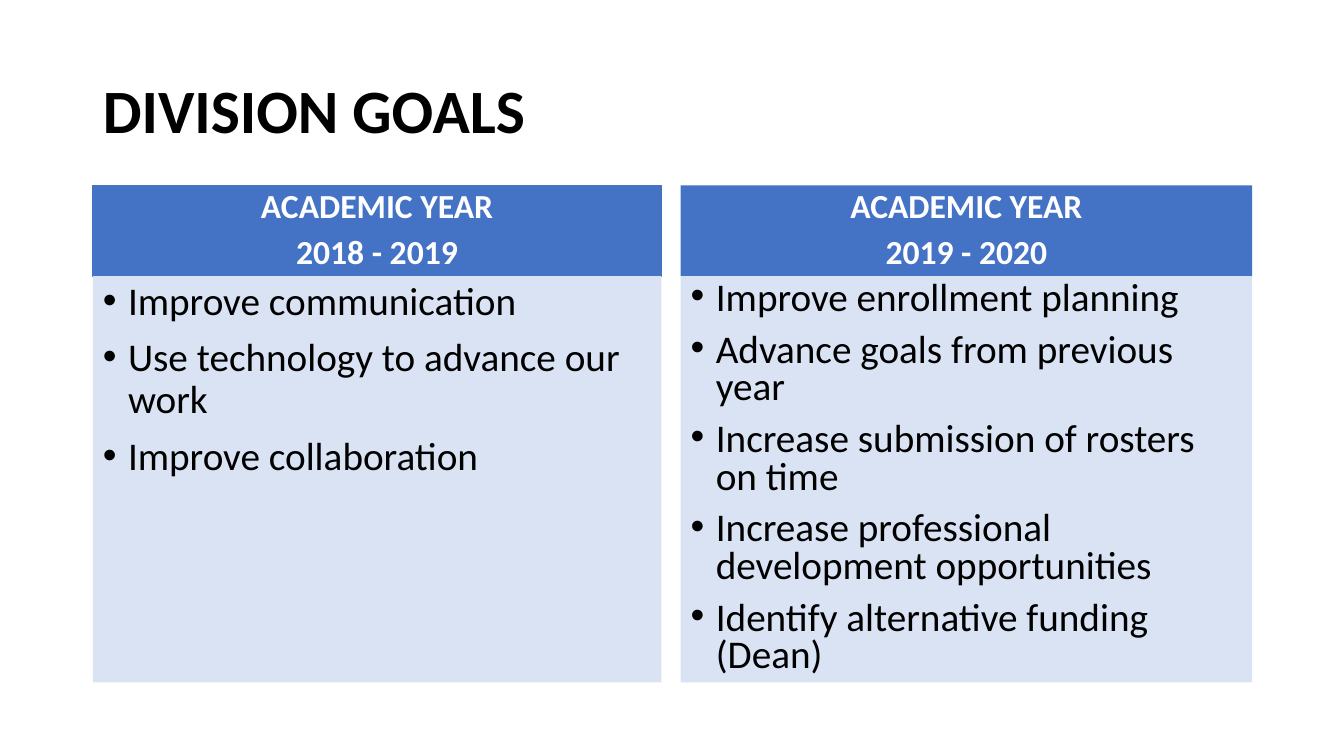
import pptx
import pptx.dml.color
import pptx.enum.text
import pptx.oxml.ns
import pptx.util
from lxml import etree
from pptx.util import Inches

BLUE, PALE, BLACK, WHITE = "4472C4", "DAE3F3", "000000", "FFFFFF"
ALIGN = pptx.enum.text.PP_ALIGN
ANCHOR = pptx.enum.text.MSO_ANCHOR
HEADER_TOP, HEADER_HEIGHT, LIST_HEIGHT = 1.84, 0.9, 4.03

COLUMNS = [
    (0.92, 5.64, "2018 - 2019", 0.9, [
        "Improve communication",
        "Use technology to advance our work",
        "Improve collaboration",
    ]),
    (6.75, 5.67, "2019 - 2020", 0.8, [
        "Improve enrollment planning",
        "Advance goals from previous year",
        "Increase submission of rosters on time",
        "Increase professional development opportunities",
        "Identify alternative funding (Dean)",
    ]),
]


def color(value):
    return pptx.dml.color.RGBColor.from_string(value)


def apply(target, values):
    for name, value in values.items():
        setattr(target, name, value)


def place(shape, left, top, width, height, fill=None):
    apply(shape, {"left": Inches(left), "top": Inches(top),
                  "width": Inches(width), "height": Inches(height)})
    if fill:
        shape.fill.solid()
        shape.fill.fore_color.rgb = color(fill)


def add_bullet(paragraph):
    properties = paragraph._p.get_or_add_pPr()
    properties.set("marL", str(Inches(0.25)))
    properties.set("indent", str(-Inches(0.25)))
    for tag, attribute, value in (("a:buFont", "typeface", "Arial"), ("a:buChar", "char", "•")):
        element = etree.SubElement(properties, pptx.oxml.ns.qn(tag))
        element.set(attribute, value)


def write(shape, lines, size, text_color, bold, spacing, alignment, anchor, bullets=False):
    frame = shape.text_frame
    frame.text = "\n".join(lines)
    apply(frame, {"word_wrap": True, "vertical_anchor": anchor,
                  "auto_size": pptx.enum.text.MSO_AUTO_SIZE.NONE})
    for index, paragraph in enumerate(frame.paragraphs):
        if bullets:
            add_bullet(paragraph)
        apply(paragraph, {"alignment": alignment, "line_spacing": spacing,
                          "space_before": pptx.util.Pt(10 if index else 0)})
        for run in paragraph.runs:
            apply(run.font, {"name": "Calibri", "size": pptx.util.Pt(size), "bold": bold})
            run.font.color.rgb = color(text_color)


def fill_title(shape, text):
    place(shape, 0.92, 0.4, 11.5, 1.45)
    write(shape, [text], 44, BLACK, True, 0.9, ALIGN.LEFT, ANCHOR.MIDDLE)


def fill_column(header, goal_list, left, width, years, spacing, goals):
    place(header, left, HEADER_TOP, width, HEADER_HEIGHT, BLUE)
    write(header, ["ACADEMIC YEAR", years], 24, WHITE, True, 0.8, ALIGN.CENTER, ANCHOR.BOTTOM)
    place(goal_list, left, HEADER_TOP + HEADER_HEIGHT, width, LIST_HEIGHT, PALE)
    write(goal_list, goals, 28, BLACK, False, spacing, ALIGN.LEFT, ANCHOR.TOP, bullets=True)


def main():
    presentation = pptx.Presentation()
    apply(presentation, {"slide_width": Inches(13.33), "slide_height": Inches(7.5)})
    slide = presentation.slides.add_slide(presentation.slide_layouts.get_by_name("Comparison"))
    title, *bodies = slide.placeholders
    fill_title(title, "DIVISION GOALS")
    for header, goal_list, column in zip(bodies[::2], bodies[1::2], COLUMNS):
        fill_column(header, goal_list, *column)
    first_header = bodies[0]
    first_header.line.color.rgb = color(BLUE)
    first_header.line.width = pptx.util.Pt(0.75)
    presentation.save("out.pptx")


if __name__ == "__main__":
    main()
